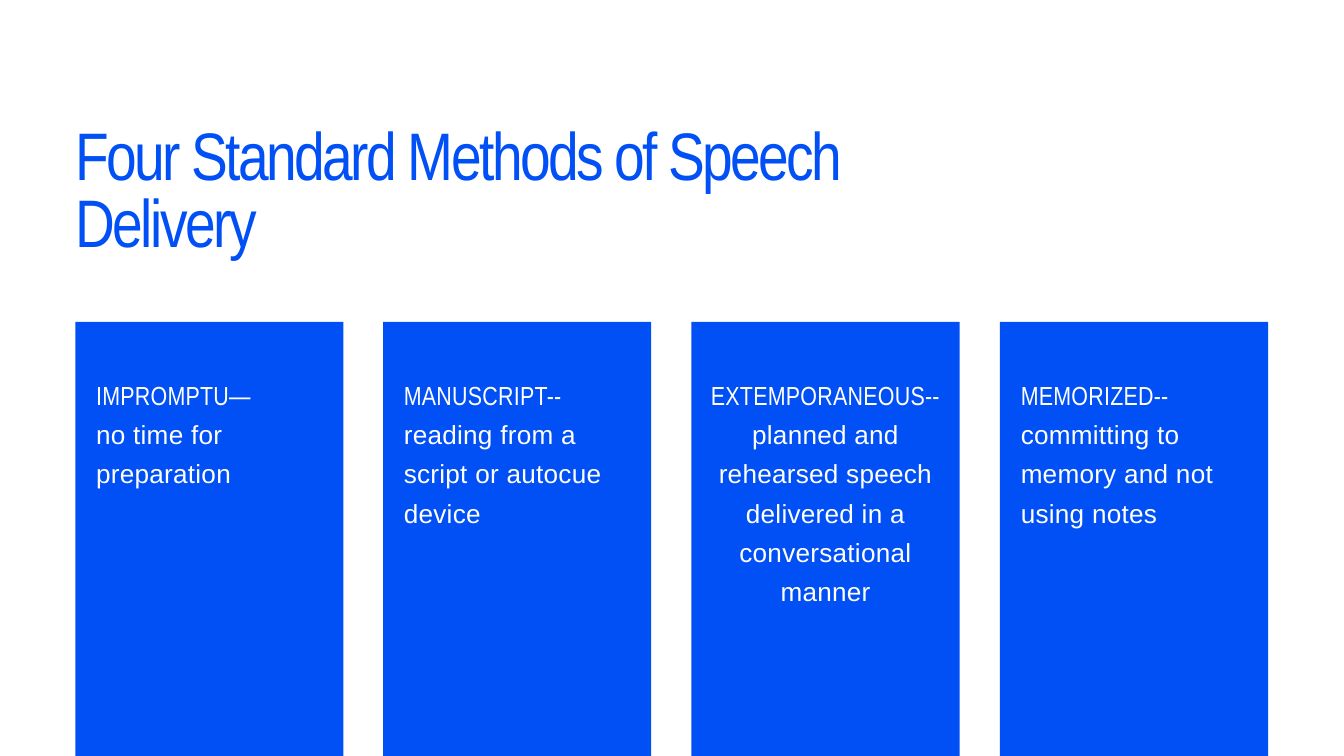
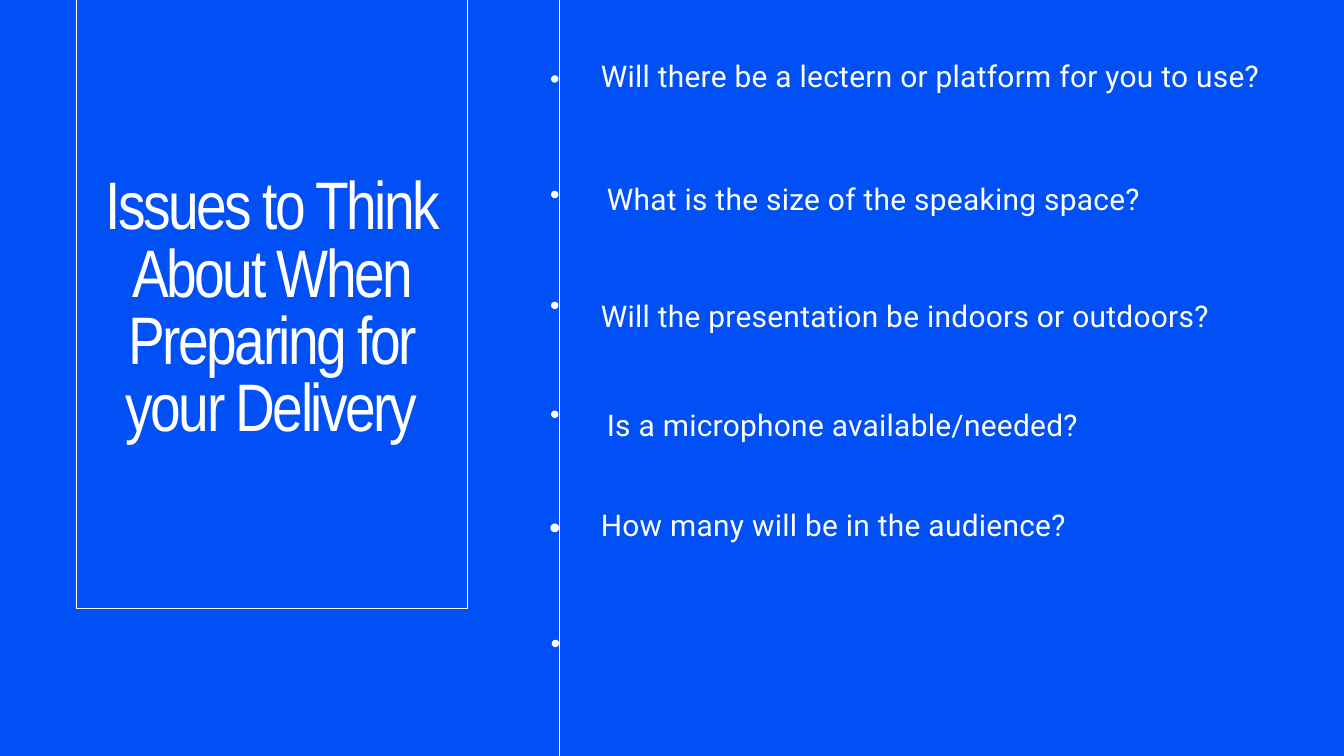
from pptx import Presentation
from pptx.dml.color import RGBColor
from pptx.enum.shapes import MSO_CONNECTOR, MSO_SHAPE
from pptx.enum.text import MSO_AUTO_SIZE, PP_ALIGN
from pptx.oxml.ns import qn
from pptx.util import Pt
from lxml.etree import SubElement

PX = 9144  # 100 px to the inch
WIDE, HIGH = 2000, 1125
BLUE, WHITE = "0050F5", "FFFFFF"
HEAD, BODY, ITEM = "Arial Narrow", "Arial", "Roboto"
LEFT, CENTER = PP_ALIGN.LEFT, PP_ALIGN.CENTER


def color(code):
    return RGBColor.from_string(code)


def scale(*sizes):
    return [size * PX for size in sizes]


class Deck:
    def __init__(self):
        self.prs = Presentation()
        self.prs.slide_width, self.prs.slide_height = scale(WIDE, HIGH)
        self.slide = None

    def page(self, back):
        self.slide = self.prs.slides.add_slide(self.prs.slide_layouts[6])
        fill = self.slide.background.fill
        fill.solid()
        fill.fore_color.rgb = color(back)

    def shape(self, kind, box, fill=None, line=None):
        item = self.slide.shapes.add_shape(kind, *scale(*box))
        item.shadow.inherit = False
        if fill:
            item.fill.solid()
            item.fill.fore_color.rgb = color(fill)
        else:
            item.fill.background()
        if line:
            item.line.color.rgb = color(line)
            item.line.width = Pt(0.75)
        else:
            item.line.fill.background()

    def line(self, start, end, ink):
        item = self.slide.shapes.add_connector(
            MSO_CONNECTOR.STRAIGHT, *scale(*start, *end))
        item.line.color.rgb = color(ink)
        item.line.width = Pt(0.75)
        SubElement(item._element.spPr, qn("a:effectLst"))

    def text(self, box, paras, size, lead, ink=WHITE, align=LEFT, track=0.3):
        """Each paragraph is a list of (words, font) runs."""
        frame = self.slide.shapes.add_textbox(*scale(*box)).text_frame
        frame.word_wrap = True
        frame.auto_size = MSO_AUTO_SIZE.SHAPE_TO_FIT_TEXT
        frame.margin_left = frame.margin_right = 0
        frame.margin_top = frame.margin_bottom = 0
        for i, runs in enumerate(paras):
            para = frame.add_paragraph() if i else frame.paragraphs[0]
            para.alignment = align
            para.line_spacing = Pt(lead)
            for words, font in runs:
                run = para.add_run()
                run.text = words
                run.font.name = font
                run.font.size = Pt(size)
                run.font.color.rgb = color(ink)
                run._r.get_or_add_rPr().set("spc", str(round(track * 100)))

    def title(self, box, words, ink, align=LEFT):
        self.text(box, [[(words, HEAD)]], 72, 72, ink, align, -2.7)


def methods(deck):
    deck.page(WHITE)
    cards = [
        ([[("IMPROMPTU—", HEAD)], [("no time for preparation", BODY)]], 170),
        ([[("MANUSCRIPT--", HEAD),
           ("reading from a script or autocue device", BODY)]], 230),
        ([[("EXTEMPORANEOUS--", HEAD),
           ("planned and rehearsed speech delivered in a conversational manner",
            BODY)]], 348),
        ([[("MEMORIZED--", HEAD),
           ("committing to memory and not using notes", BODY)]], 230),
    ]
    lefts = [112 + i * 1376 // 3 for i in range(len(cards))]
    for left in lefts:
        deck.shape(MSO_SHAPE.RECTANGLE, (left, 479, 399, 781), BLUE)
    deck.title((112, 189, 1227, 206),
               "Four Standard Methods of Speech Delivery", BLUE)
    for i, (left, (paras, high)) in enumerate(zip(lefts, cards)):
        mid = i == 2  # the long heading needs the whole card
        inset = 0 if mid else 31
        deck.text((left + inset, 553, 399 - 2 * inset, high), paras, 28, 42,
                  align=CENTER if mid else LEFT)


def issues(deck):
    deck.page(BLUE)
    deck.shape(MSO_SHAPE.RECTANGLE, (113, -61, 582, 967), line=WHITE)
    deck.title((155, 262, 498, 404),
               "Issues to Think About When Preparing for your Delivery",
               WHITE, CENTER)
    deck.line((832, 0), (832, HIGH), WHITE)
    for left, top, size in [(820, 112, 11), (820, 284, 11), (820, 449, 11),
                            (820, 611, 11), (819, 779, 13), (821, 952, 11)]:
        deck.shape(MSO_SHAPE.OVAL, (left, top, size, size), WHITE)
    for left, top, wide, words in [
        (894, 73, 1047, "Will there be a lectern or platform for you to use?"),
        (903, 256, 984, "What is the size of the speaking space?"),
        (894, 429, 984, "Will the presentation be indoors or outdoors?"),
        (903, 592, 984, "Is a microphone available/needed?"),
        (894, 740, 984, "How many will be in the audience?"),
    ]:
        deck.text((left, top, wide, 66), [[(words, ITEM)]], 32, 48)


def main():
    deck = Deck()
    methods(deck)
    issues(deck)
    deck.prs.save("out.pptx")


if __name__ == "__main__":
    main()
